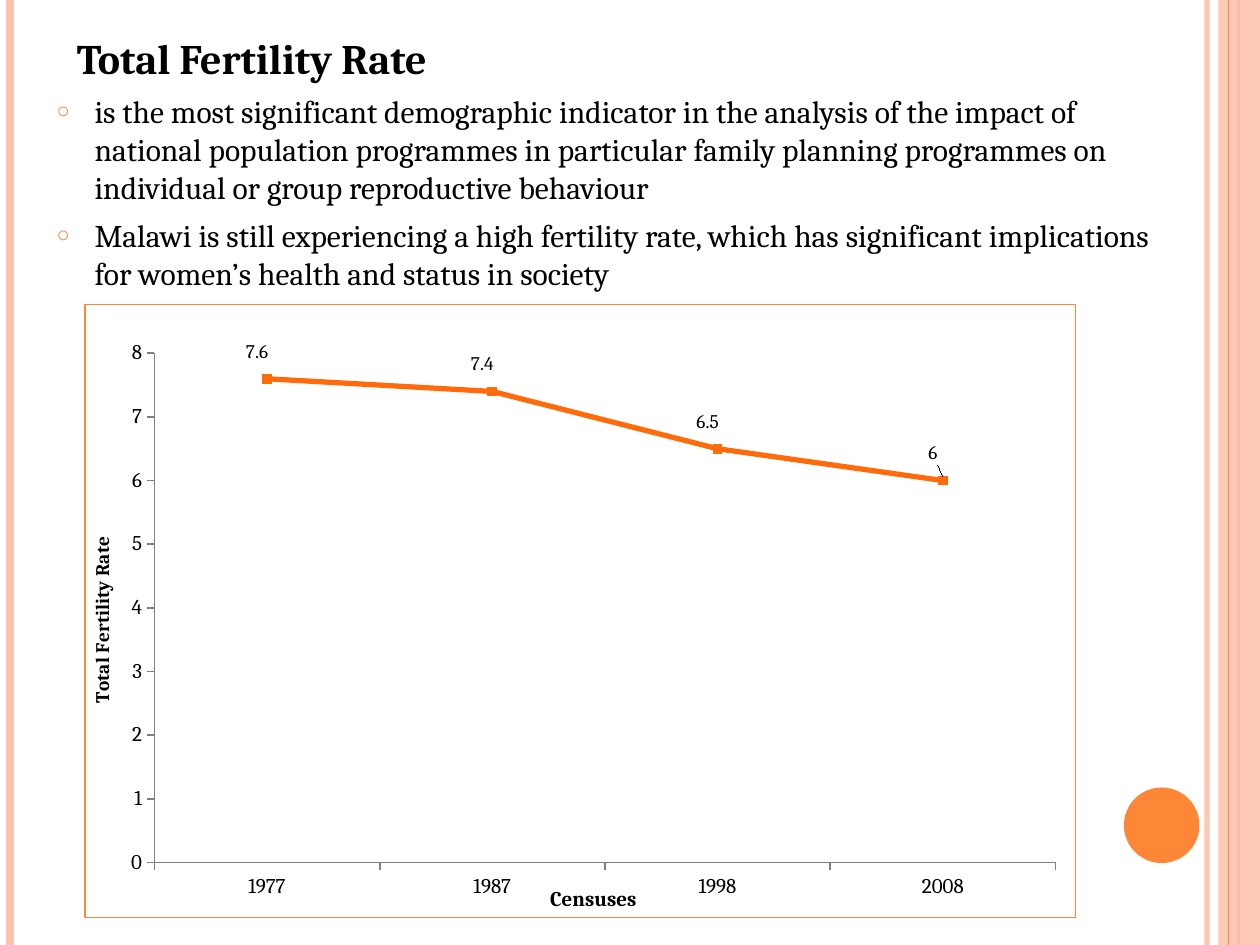
from dataclasses import dataclass

from lxml.etree import SubElement
from pptx import Presentation
from pptx.chart.data import CategoryChartData
from pptx.dml.color import RGBColor
from pptx.enum.chart import XL_CHART_TYPE, XL_LABEL_POSITION, XL_MARKER_STYLE, XL_TICK_MARK
from pptx.enum.shapes import MSO_CONNECTOR, MSO_SHAPE
from pptx.enum.text import MSO_ANCHOR, MSO_AUTO_SIZE, PP_ALIGN
from pptx.oxml import parse_xml
from pptx.oxml.ns import nsdecls, qn
from pptx.util import Inches, Pt


@dataclass(frozen=True)
class Theme:
    font: str = "Cambria"
    text: str = "000000"
    accent: str = "FE8637"
    pale: str = "FEC3AE"
    series: str = "FF6A0A"
    axis: str = "808080"
    grid: str = "FFFFFF"
    title_size: int = 24
    body_size: int = 18
    axis_size: int = 12
    label_size: int = 11
    chart_size: int = 10


THEME = Theme()
BULLETS = [
    "is the most significant demographic indicator in the analysis of the impact of "
    "national population programmes in particular family planning programmes on "
    "individual or group reproductive behaviour",
    "Malawi is still experiencing a high fertility rate, which has significant "
    "implications for women’s health and status in society",
]
CENSUSES = ["1977", "1987", "1998", "2008"]
FERTILITY_RATES = [7.6, 7.4, 6.5, 6]


def rgb(color):
    return RGBColor.from_string(color)


def style_font(font, size, bold=False):
    font.name = THEME.font
    font.size = Pt(size)
    font.bold = bold
    font.color.rgb = rgb(THEME.text)


def style_line(line, color, width):
    line.color.rgb = rgb(color)
    line.width = Pt(width)


def set_opacity(element, percent):
    color = next(element.iter(qn("a:srgbClr")))
    SubElement(color, qn("a:alpha"), val=str(percent * 1000))


def place(shape, left, top, width, height):
    shape.left, shape.top = Inches(left), Inches(top)
    shape.width, shape.height = Inches(width), Inches(height)


def add_rail(slide, left, color, width, opacity=100):
    """Draw a vertical line over the full slide height."""
    rail = slide.shapes.add_connector(
        MSO_CONNECTOR.STRAIGHT, Inches(left), 0, Inches(left), Inches(7.5))
    style_line(rail.line, color, width)
    properties = rail._element.spPr
    SubElement(properties, qn("a:effectLst"))
    if opacity < 100:
        set_opacity(properties, opacity)


def add_filled_shape(slide, kind, box, color, opacity=100):
    shape = slide.shapes.add_shape(kind, *(Inches(value) for value in box))
    shape.shadow.inherit = False
    shape.fill.solid()
    shape.fill.fore_color.rgb = rgb(color)
    shape.line.fill.background()
    if opacity < 100:
        set_opacity(shape._element.spPr, opacity)


def add_decoration(slide):
    add_rail(slide, 9.58, THEME.pale, 3, 93)
    add_rail(slide, 0.08, THEME.pale, 4.5)
    add_rail(slide, 9.83, THEME.accent, 1.5)
    add_filled_shape(slide, MSO_SHAPE.RECTANGLE, (9.67, 0, 0.33, 7.5), THEME.pale, 87)
    add_rail(slide, 9.75, THEME.accent, 0.75)
    add_filled_shape(slide, MSO_SHAPE.OVAL, (8.92, 6.25, 0.6, 0.6), THEME.accent)


def fill_title(title, text):
    place(title, 0.51, 0.21, 3.6, 0.5)
    frame = title.text_frame
    frame.word_wrap = False
    frame.auto_size = MSO_AUTO_SIZE.SHAPE_TO_FIT_TEXT
    frame.vertical_anchor = MSO_ANCHOR.TOP
    paragraph = frame.paragraphs[0]
    paragraph.alignment = PP_ALIGN.LEFT
    run = paragraph.add_run()
    run.text = text
    style_font(run.font, THEME.title_size, bold=True)


def add_bullet(paragraph):
    properties = paragraph._p.get_or_add_pPr()
    properties.set("marL", str(Inches(0.3)))
    properties.set("indent", str(Inches(-0.3)))
    color = SubElement(properties, qn("a:buClr"))
    SubElement(color, qn("a:srgbClr"), val=THEME.accent)
    SubElement(properties, qn("a:buSzPct"), val="70000")
    SubElement(properties, qn("a:buChar"), char="○")


def fill_body(body, items):
    place(body, 0.35, 0.68, 9.07, 1.69)
    frame = body.text_frame
    frame.word_wrap = True
    frame.auto_size = MSO_AUTO_SIZE.NONE
    for index, item in enumerate(items):
        paragraph = frame.add_paragraph() if index else frame.paragraphs[0]
        paragraph.space_before = Pt(6)
        add_bullet(paragraph)
        run = paragraph.add_run()
        run.text = item
        style_font(run.font, THEME.body_size)


def layout_xml(target, **values):
    """Make a manual chart layout; target is inner for a plot area."""
    parts = [f'<c:layoutTarget val="{target}"/>'] if target else []
    if target:
        parts += [f'<c:{name}Mode val="edge"/>' for name in "xy"]
    parts += [f'<c:{name} val="{value}"/>' for name, value in values.items()]
    return parse_xml(f'<c:layout {nsdecls("c")}><c:manualLayout>{"".join(parts)}'
                     "</c:manualLayout></c:layout>")


def style_axis(axis, title, title_size):
    axis.major_tick_mark = XL_TICK_MARK.OUTSIDE
    axis.minor_tick_mark = XL_TICK_MARK.NONE
    style_font(axis.tick_labels.font, THEME.axis_size)
    style_line(axis.format.line, THEME.axis, 1)
    run = axis.axis_title.text_frame.paragraphs[0].add_run()
    run.text = title
    style_font(run.font, title_size, bold=True)


def style_series(series):
    series.smooth = False
    style_line(series.format.line, THEME.series, 3)
    series.marker.style = XL_MARKER_STYLE.SQUARE
    series.marker.size = 5
    series.marker.format.fill.solid()
    series.marker.format.fill.fore_color.rgb = rgb(THEME.series)
    style_line(series.marker.format.line, THEME.series, 0.75)
    for index in range(len(FERTILITY_RATES)):
        label = series.points[index].data_label
        style_font(label.font, THEME.label_size)
        label.position = XL_LABEL_POSITION.ABOVE
    for label in series._element.iter(qn("c:dLbl")):
        label.insert(1, layout_xml(None, x=-0.01, y=-0.01))


def frame_chart(chart):
    """Fix the plot area and outline the chart."""
    plot_area = chart._chartSpace.chart.plotArea
    for layout in plot_area.findall(qn("c:layout")):
        plot_area.remove(layout)
    plot_area.insert(0, layout_xml("inner", x=0.07, y=0.08, w=0.91, h=0.83))
    chart._chartSpace.chart.addnext(parse_xml(
        f'<c:spPr {nsdecls("c", "a")}><a:noFill/><a:ln w="{Pt(0.75)}"><a:solidFill>'
        f'<a:srgbClr val="{THEME.accent}"/></a:solidFill></a:ln></c:spPr>'))


def add_fertility_chart(slide):
    data = CategoryChartData()
    data.categories = CENSUSES
    data.add_series("Series 1", FERTILITY_RATES)
    box = (Inches(value) for value in (0.67, 2.41, 7.87, 4.88))
    chart = slide.shapes.add_chart(XL_CHART_TYPE.LINE_MARKERS, *box, data).chart
    chart.has_title = False
    chart.has_legend = False
    style_font(chart.font, THEME.chart_size)
    chart.plots[0].vary_by_categories = False
    style_axis(chart.category_axis, "Censuses", THEME.axis_size)
    values = chart.value_axis
    style_axis(values, "Total Fertility Rate", THEME.label_size)
    values.minimum_scale, values.maximum_scale, values.major_unit = 0, 8, 1
    style_line(values.major_gridlines.format.line, THEME.grid, 0.75)
    style_series(chart.plots[0].series[0])
    frame_chart(chart)


def main():
    presentation = Presentation()
    presentation.slide_width, presentation.slide_height = Inches(10), Inches(7.5)
    slide = presentation.slides.add_slide(presentation.slide_layouts[1])
    add_decoration(slide)
    fill_title(slide.shapes.title, "Total Fertility Rate")
    fill_body(slide.placeholders[1], BULLETS)
    add_fertility_chart(slide)
    presentation.save("out.pptx")


if __name__ == "__main__":
    main()
